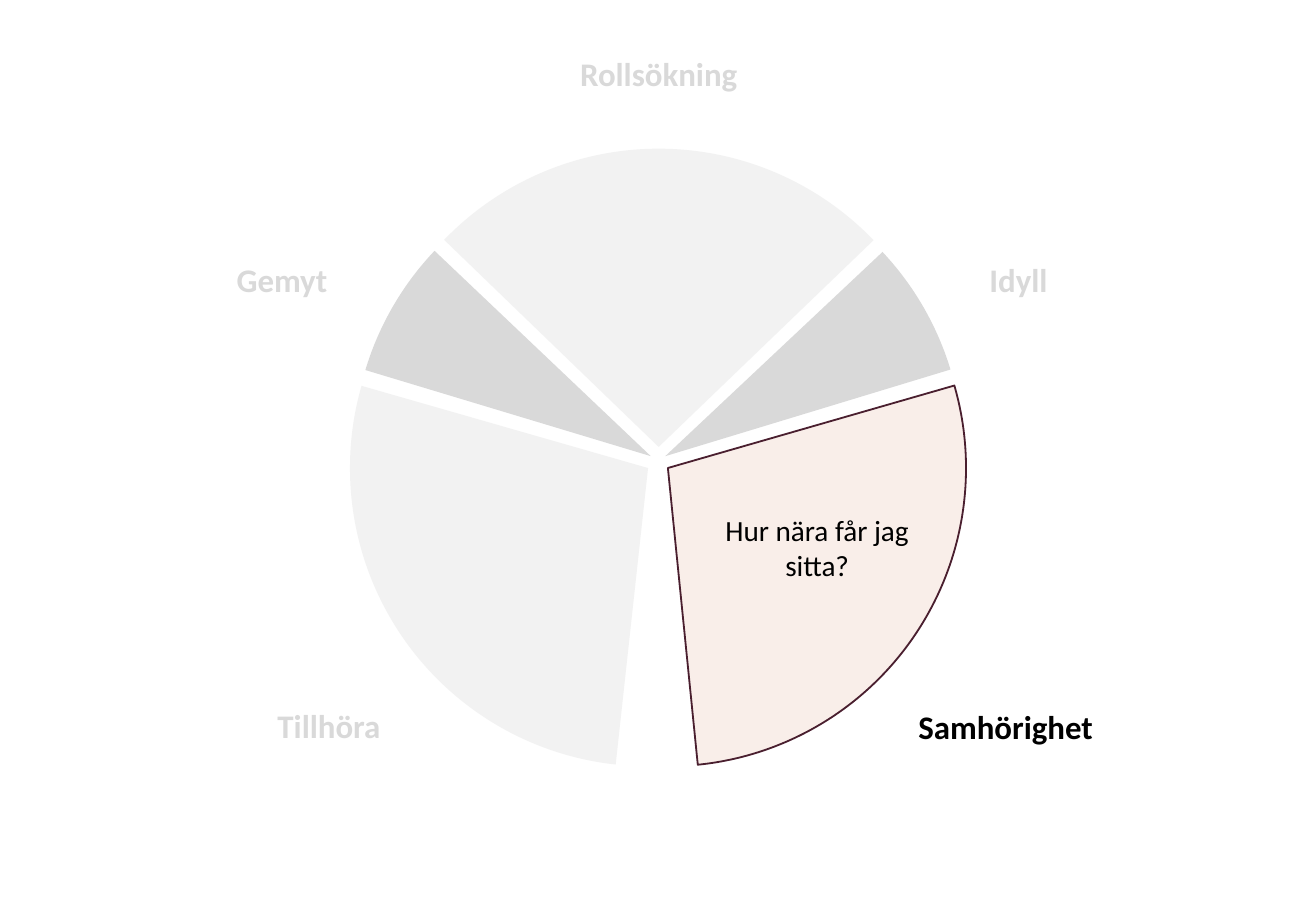
from dataclasses import dataclass

from pptx import Presentation
from pptx.dml.color import RGBColor as Rgb
from pptx.enum.shapes import MSO_SHAPE as Kind
from pptx.enum.text import MSO_AUTO_SIZE as Fit, PP_ALIGN as Align
from pptx.shapes.group import GroupShape as Group
from pptx.util import Inches, Pt


@dataclass(frozen=True)
class Theme:
    font: str = "Calibri"
    label: int = 18
    body: int = 16
    ink: str = "000000"
    faint: str = "D9D9D9"
    pale: str = "F2F2F2"
    rose: str = "F9EEE9"
    edge: str = "4A1F2F"


@dataclass(frozen=True)
class Slice:
    """A pie sector; start and end are degrees before the turn."""
    left: float
    top: float
    turn: float
    start: float
    end: float
    fill: str
    line: str | None = None


@dataclass(frozen=True)
class Label:
    text: str
    left: float
    top: float
    width: float
    color: str


THEME = Theme()
SIZE = 4.53
SLICES = [
    Slice(2.74, 1.13, 60.9, 163.07, 255.22, THEME.pale),
    Slice(2.66, 1.29, 301.9, 154.33, 254.11, THEME.pale),
    Slice(2.81, 1.29, 176.6, 167.34, 267.65, THEME.rose, THEME.edge),
    Slice(2.79, 1.2, 157, 159.78, 186.1, THEME.faint),
    Slice(2.68, 1.2, 39.1, 157.66, 184.39, THEME.faint),
]
LABELS = [
    Label("Rollsökning", 4.31, 0.36, 1.4, THEME.faint),
    Label("Idyll", 7.42, 1.92, 0.65, THEME.faint),
    Label("Gemyt", 1.7, 1.92, 0.9, THEME.faint),
    Label("Samhörighet", 6.88, 5.32, 1.54, THEME.ink),
    Label("Tillhöra", 2.01, 5.31, 0.99, THEME.faint),
]


def add_slice(group: Group, part: Slice) -> None:
    pie = group.shapes.add_shape(
        Kind.PIE, Inches(part.left), Inches(part.top), Inches(SIZE), Inches(SIZE))
    pie.shadow.inherit = False
    pie.rotation = part.turn
    # One adjustment unit is 100000 / 60000 of a degree.
    pie.adjustments[0] = part.start * 0.6
    pie.adjustments[1] = part.end * 0.6
    pie.fill.solid()
    pie.fill.fore_color.rgb = Rgb.from_string(part.fill)
    if part.line:
        pie.line.color.rgb = Rgb.from_string(part.line)
        pie.line.width = Pt(1)
    else:
        pie.line.fill.background()


def add_text(group: Group, text: str, left: float, top: float, width: float,
             height: float, *, size: int, color: str, bold: bool = False,
             align: Align = Align.LEFT) -> None:
    """Add a box with one paragraph for each line of text."""
    box = group.shapes.add_textbox(
        Inches(left), Inches(top), Inches(width), Inches(height))
    frame = box.text_frame
    frame.text = text
    frame.word_wrap = False
    frame.auto_size = Fit.SHAPE_TO_FIT_TEXT
    for para in frame.paragraphs:
        para.alignment = align
        for run in para.runs:
            font = run.font
            font.name, font.size, font.bold = THEME.font, Pt(size), bold
            font.color.rgb = Rgb.from_string(color)


def main() -> None:
    deck = Presentation()
    deck.slide_width, deck.slide_height = Inches(10), Inches(6.95)
    slide = deck.slides.add_slide(deck.slide_layouts[6])
    wheel = slide.shapes.add_group_shape()
    for part in SLICES:
        add_slice(wheel, part)
    add_text(wheel, "Hur nära får jag\nsitta?", 5.38, 3.84, 1.66, 0.64,
             size=THEME.body, color=THEME.ink, align=Align.CENTER)
    for label in LABELS:
        add_text(wheel, label.text, label.left, label.top, label.width, 0.4,
                 size=THEME.label, color=label.color, bold=True)
    deck.save("out.pptx")


if __name__ == "__main__":
    main()
